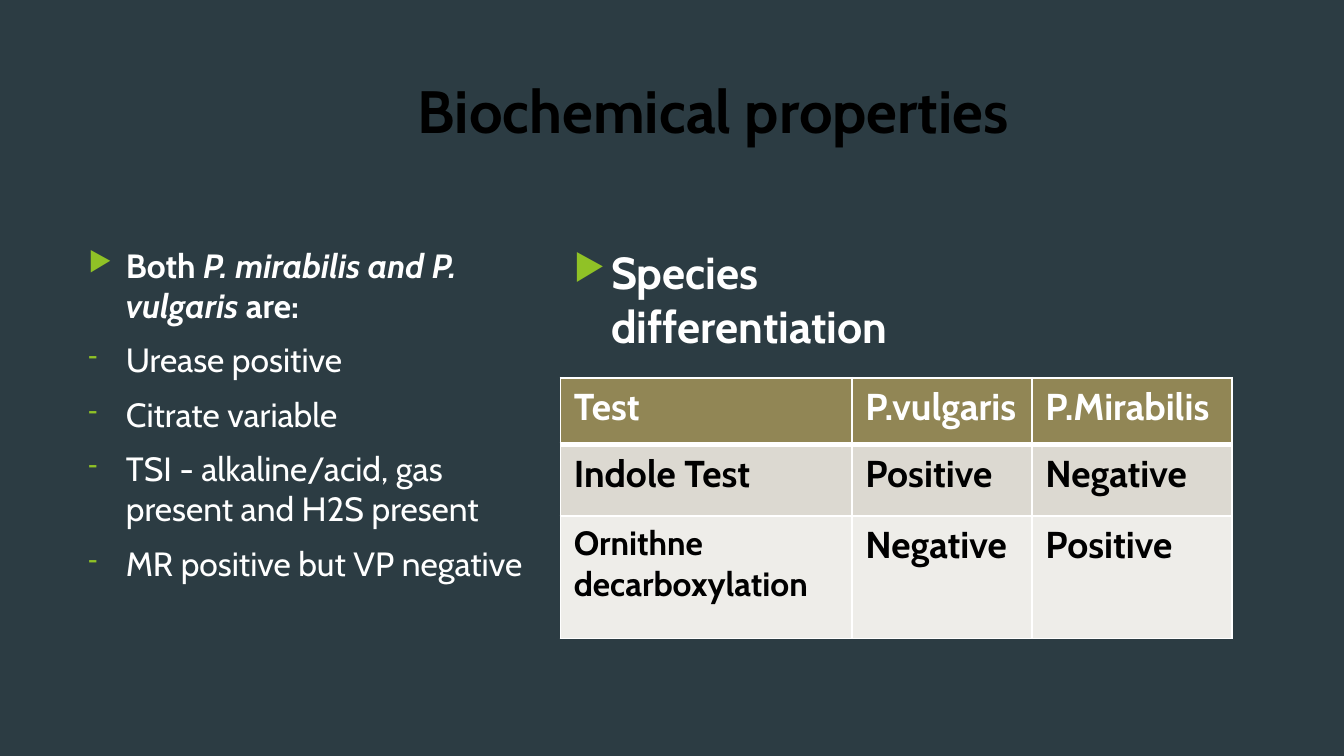
from dataclasses import dataclass

from lxml.etree import SubElement
from pptx import Presentation
from pptx.dml.color import RGBColor
from pptx.enum.text import PP_ALIGN
from pptx.oxml import parse_xml
from pptx.oxml.ns import nsdecls, qn
from pptx.util import Cm, Pt


@dataclass(frozen=True)
class Theme:
    font: str = "Cabin"
    background: str = "2C3C43"
    light: str = "FFFFFF"
    dark: str = "000000"
    bullet: str = "90C226"
    header_fill: str = "918655"
    row_fills: tuple = ("DCD9D1", "EEEDE9")
    title_size: int = 32
    heading_size: int = 24
    table_size: int = 20
    body_size: int = 18


THEME = Theme()

PROPERTIES = [
    ("▶", [("Both ", True, False), ("P. mirabilis and P. vulgaris ", True, True), ("are:", True, False)]),
    ("-", [("Urease positive", False, False)]),
    ("-", [("Citrate variable", False, False)]),
    ("-", [("TSI - alkaline/acid, gas present and H2S present", False, False)]),
    ("-", [("MR positive but VP negative", False, False)]),
]
SPECIES_HEADING = [("▶", [("Species differentiation", True, False)])]
TEST_RESULTS = [
    ["Test", "P.vulgaris", "P.Mirabilis"],
    ["Indole Test", "Positive", "Negative"],
    ["Ornithne decarboxylation", "Negative", "Positive"],
]


def add_run(paragraph, text, *, size, color, bold=False, italic=False):
    run = paragraph.add_run()
    run.text = text
    font = run.font
    font.name, font.size = THEME.font, Pt(size)
    font.bold, font.italic = bold, italic
    font.color.rgb = RGBColor.from_string(color)


def add_text_frame(slide, box):
    text_frame = slide.shapes.add_textbox(*box).text_frame
    text_frame.word_wrap = True
    return text_frame


def add_bullet(paragraph, character):
    properties = paragraph._p.get_or_add_pPr()
    properties.set("marL", str(Cm(0.71)))
    properties.set("indent", str(-Cm(0.71)))
    color = SubElement(properties, qn("a:buClr"))
    SubElement(color, qn("a:srgbClr"), val=THEME.bullet)
    SubElement(properties, qn("a:buSzPct"), val="80000")
    SubElement(properties, qn("a:buChar"), char=character)


def add_title(slide, box, text):
    paragraph = add_text_frame(slide, box).paragraphs[0]
    paragraph.alignment = PP_ALIGN.RIGHT
    add_run(paragraph, text, size=THEME.title_size, color=THEME.dark, bold=True)


def add_bullet_list(slide, box, items, size):
    """Place items, each a bullet character and its (text, bold, italic) runs."""
    text_frame = add_text_frame(slide, box)
    for index, (character, runs) in enumerate(items):
        paragraph = text_frame.add_paragraph() if index else text_frame.paragraphs[0]
        add_bullet(paragraph, character)
        if index:
            paragraph.space_before = Pt(7.5)
        for text, bold, italic in runs:
            add_run(paragraph, text, size=size, color=THEME.light, bold=bold, italic=italic)


def set_borders(cell, **widths):
    """Draw the four borders, 1 pt wide unless a side is given its own width."""
    properties = cell._tc.get_or_add_tcPr()
    for position, side in enumerate("LRTB"):
        line = parse_xml(
            f'<a:ln{side} {nsdecls("a")} w="{Pt(widths.get(side, 1))}"><a:solidFill>'
            f'<a:srgbClr val="{THEME.light}"/></a:solidFill></a:ln{side}>'
        )
        properties.insert(position, line)


def add_results_table(slide, box, rows, column_shares, row_shares):
    """Share the width and height of the box among the columns and rows."""
    left, top, width, height = box
    table = slide.shapes.add_table(len(rows), len(rows[0]), left, top, width, height).table
    for column, share in zip(table.columns, column_shares):
        column.width = round(width * share / sum(column_shares))
    for row, share in zip(table.rows, row_shares):
        row.height = round(height * share / sum(row_shares))

    fills = (THEME.header_fill, *THEME.row_fills)
    for row_index, texts in enumerate(rows):
        for column_index, text in enumerate(texts):
            cell = table.cell(row_index, column_index)
            cell.fill.solid()
            cell.fill.fore_color.rgb = RGBColor.from_string(fills[row_index])
            set_borders(cell, **({"B": 3}, {"T": 3}, {})[row_index])
            is_long = len(text) > 20
            add_run(
                cell.text_frame.paragraphs[0],
                text,
                size=THEME.body_size if is_long else THEME.table_size,
                color=THEME.dark if row_index else THEME.light,
                bold=True,
            )


def build_slide(presentation):
    slide = presentation.slides.add_slide(presentation.slide_layouts[6])
    slide.background.fill.solid()
    slide.background.fill.fore_color.rgb = RGBColor.from_string(THEME.background)

    left, right, body_top = Cm(1.42), Cm(10.59), Cm(4.5)
    body_size = Cm(8.72), Cm(8.08)
    add_title(slide, (left, Cm(1.27), Cm(17.91), Cm(2.74)), "Biochemical properties")
    add_bullet_list(slide, (left, body_top, *body_size), PROPERTIES, THEME.body_size)
    add_bullet_list(slide, (right, body_top, *body_size), SPECIES_HEADING, THEME.heading_size)
    add_results_table(
        slide,
        (right, Cm(7.14), Cm(12.7), Cm(4.93)),
        TEST_RESULTS,
        column_shares=(2.17, 1.34, 1.49),
        row_shares=(0.5, 0.53, 0.91),
    )


def main():
    presentation = Presentation()
    presentation.slide_width, presentation.slide_height = Cm(25.4), Cm(14.29)
    build_slide(presentation)
    presentation.save("out.pptx")


if __name__ == "__main__":
    main()
